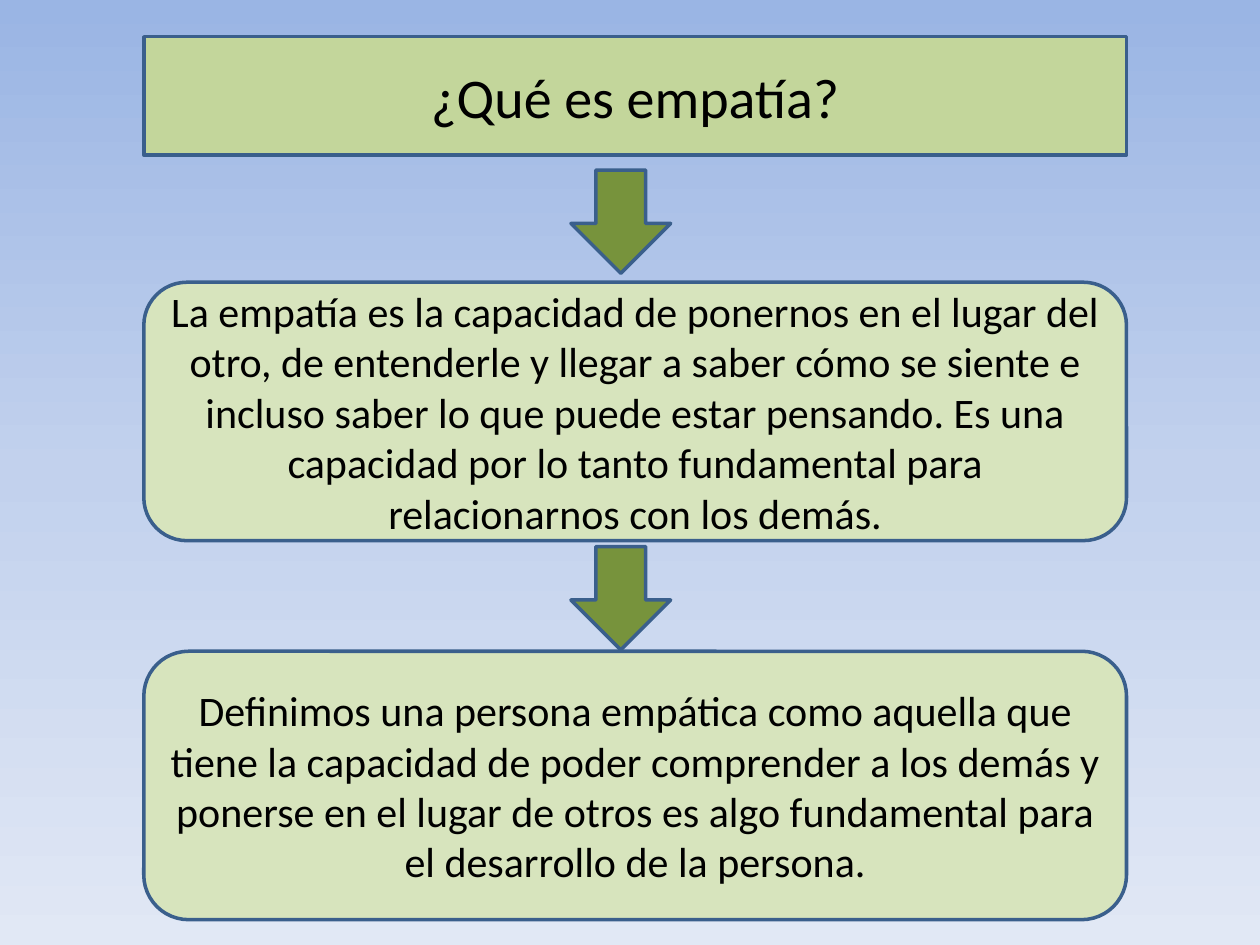
from dataclasses import dataclass

from lxml.etree import SubElement
from pptx import Presentation
from pptx.dml.color import RGBColor
from pptx.enum.shapes import MSO_SHAPE
from pptx.enum.text import MSO_ANCHOR, MSO_AUTO_SIZE, PP_ALIGN
from pptx.oxml.ns import qn
from pptx.util import Cm, Pt


@dataclass(frozen=True)
class Theme:
    font: str = "Calibri"
    heading_size: int = 32
    body_size: int = 24
    text: str = "000000"
    heading_fill: str = "C3D69B"
    body_fill: str = "D7E4BD"
    arrow_fill: str = "77933C"
    outline: str = "3A5F8C"
    outline_width: int = 2
    sky: tuple = ((0, "9AB5E4"), (50, "C2D1ED"), (100, "E1E8F5"))


THEME = Theme()
BOX_LEFT, BOX_WIDTH = 2.9, 19.81
ARROW_LEFT, ARROW_WIDTH, ARROW_HEIGHT = 11.51, 2.01, 2.08

HEADING = "¿Qué es empatía?"
# Top, height and wording of each explanation
EXPLANATIONS = (
    (5.69, 5.21,
     "La empatía es la capacidad de ponernos en el lugar del otro, de "
     "entenderle y llegar a saber cómo se siente e incluso saber lo que puede "
     "estar pensando. Es una capacidad por lo tanto fundamental para "
     "relacionarnos con los demás."),
    (13.13, 5.41,
     "Definimos una persona empática como aquella que tiene la capacidad de "
     "poder comprender a los demás y ponerse en el lugar de otros es algo "
     "fundamental para el desarrollo de la persona."),
)
ARROW_TOPS = (3.43, 11.02)


def paint_background(slide):
    fill = slide.background.fill
    fill.gradient()
    fill.gradient_angle = 270  # top to bottom
    stops = slide.element.find(".//" + qn("a:gsLst"))
    for old_stop in list(stops):
        stops.remove(old_stop)
    for percent, color in THEME.sky:
        stop = SubElement(stops, qn("a:gs"), pos=str(percent * 1000))
        SubElement(stop, qn("a:srgbClr"), val=color)


def style_surface(surface, color):
    surface.fill.solid()
    surface.fill.fore_color.rgb = RGBColor.from_string(color)
    surface.line.color.rgb = RGBColor.from_string(THEME.outline)
    surface.line.width = Pt(THEME.outline_width)


def write_centered(box, wording, size):
    frame = box.text_frame
    frame.text = wording
    frame.word_wrap = True
    frame.auto_size = MSO_AUTO_SIZE.NONE
    frame.vertical_anchor = MSO_ANCHOR.MIDDLE
    paragraph = frame.paragraphs[0]
    paragraph.alignment = PP_ALIGN.CENTER
    font = paragraph.runs[0].font
    font.name = THEME.font
    font.size = Pt(size)
    font.color.rgb = RGBColor.from_string(THEME.text)


def add_heading(slide):
    heading = slide.shapes.title
    heading.left, heading.top = Cm(BOX_LEFT), Cm(0.74)
    heading.width, heading.height = Cm(BOX_WIDTH), Cm(2.39)
    # Rounded corners for the title placeholder
    geometry = SubElement(heading.element.spPr, qn("a:prstGeom"), prst="roundRect")
    SubElement(geometry, qn("a:avLst"))
    style_surface(heading, THEME.heading_fill)
    write_centered(heading, HEADING, THEME.heading_size)


def add_explanation(slide, top, height, wording):
    explanation = slide.shapes.add_shape(
        MSO_SHAPE.ROUNDED_RECTANGLE,
        Cm(BOX_LEFT), Cm(top), Cm(BOX_WIDTH), Cm(height))
    explanation.shadow.inherit = False
    style_surface(explanation, THEME.body_fill)
    write_centered(explanation, wording, THEME.body_size)


def add_down_arrow(slide, top):
    arrow = slide.shapes.add_shape(
        MSO_SHAPE.DOWN_ARROW,
        Cm(ARROW_LEFT), Cm(top), Cm(ARROW_WIDTH), Cm(ARROW_HEIGHT))
    arrow.shadow.inherit = False
    style_surface(arrow, THEME.arrow_fill)


def main():
    presentation = Presentation()
    presentation.slide_width, presentation.slide_height = Cm(25.4), Cm(19.05)
    title_only = presentation.slide_layouts[5]
    slide = presentation.slides.add_slide(title_only)

    # Background and heading
    paint_background(slide)
    add_heading(slide)

    # Explanations, then the arrows leading to them
    for top, height, wording in EXPLANATIONS:
        add_explanation(slide, top, height, wording)
    for top in ARROW_TOPS:
        add_down_arrow(slide, top)

    presentation.save("out.pptx")


if __name__ == "__main__":
    main()
